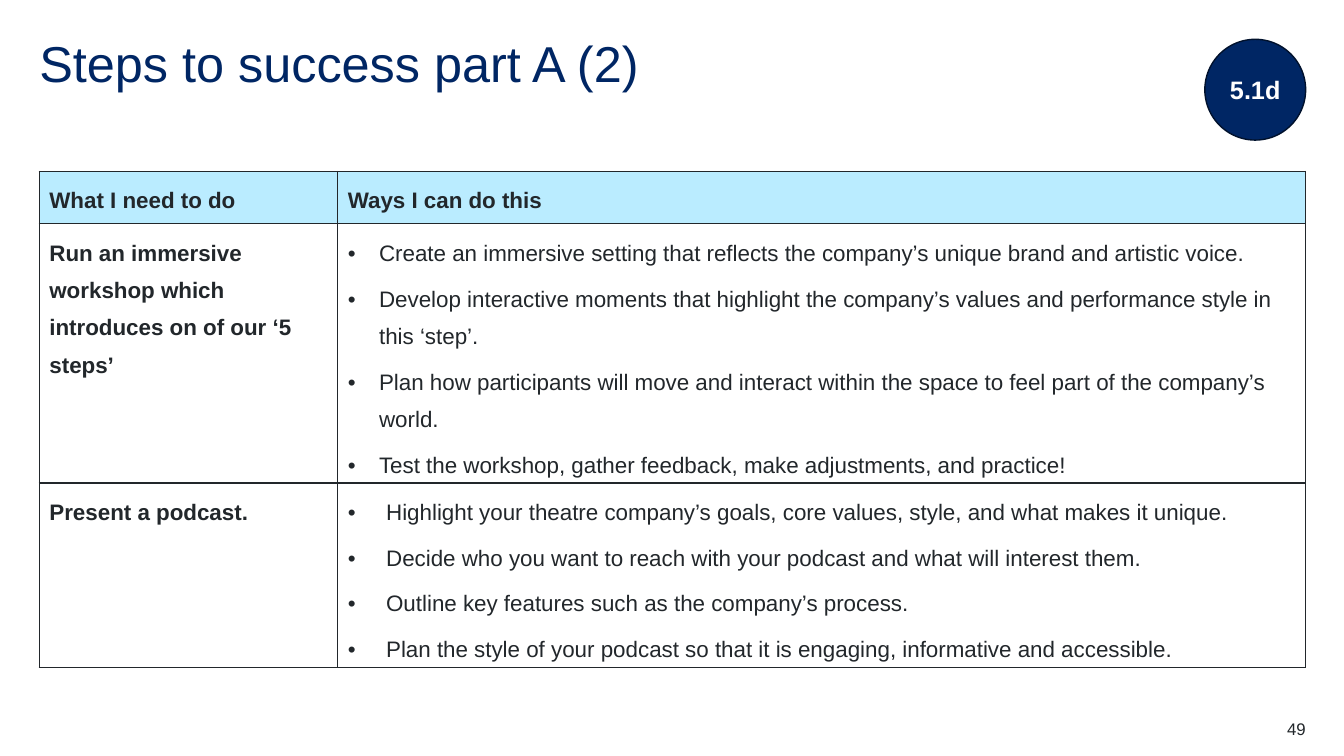
"""Build the 'Steps to success part A (2)' slide."""
from lxml.etree import SubElement
from pptx import Presentation
from pptx.dml.color import RGBColor
from pptx.enum.shapes import MSO_SHAPE
from pptx.enum.text import MSO_ANCHOR, PP_ALIGN
from pptx.oxml.ns import qn
from pptx.util import Inches, Pt

TITLE = "Steps to success part A (2)"
BADGE = "5.1d"
PAGE_NUMBER = "49"
HEADERS = ["What I need to do", "Ways I can do this"]
STEPS = [
    ("Run an immersive workshop which introduces on of our ‘5 steps’", 0.31, [
        "Create an immersive setting that reflects the company’s unique brand and artistic voice.",
        "Develop interactive moments that highlight the company’s values and performance style in this ‘step’.",
        "Plan how participants will move and interact within the space to feel part of the company’s world.",
        "Test the workshop, gather feedback, make adjustments, and practice!",
    ]),
    ("Present a podcast.", 0.38, [
        "Highlight your theatre company’s goals, core values, style, and what makes it unique.",
        "Decide who you want to reach with your podcast and what will interest them.",
        "Outline key features such as the company’s process.",
        "Plan the style of your podcast so that it is engaging, informative and accessible.",
    ]),
]
NAVY, NAVY_EDGE, INK, SKY, WHITE = "002664", "00112C", "22272B", "BAECFF", "FFFFFF"
MARGIN, CONTENT_WIDTH = 0.39, 12.56
RIGHT_EDGE = MARGIN + CONTENT_WIDTH
TABLE_TOP = 1.7
COLUMN_WIDTHS = [2.96, 9.6]
ROW_HEIGHTS = [0.52, 2.57, 1.82]


def color(value):
    return RGBColor.from_string(value)


def format_paragraph(paragraph, size, font_color, bold=False, align=PP_ALIGN.LEFT):
    paragraph.alignment = align
    for run in paragraph.runs:
        run.font.name = "Arial"
        run.font.size = Pt(size)
        run.font.bold = bold
        run.font.color.rgb = color(font_color)


def clear_insets(text_frame):
    text_frame.margin_left = text_frame.margin_right = 0
    text_frame.margin_top = text_frame.margin_bottom = 0
    text_frame.vertical_anchor = MSO_ANCHOR.TOP
    text_frame.word_wrap = True


def add_bullet(paragraph, indent):
    properties = paragraph._p.get_or_add_pPr()
    properties.set("marL", str(Inches(indent)))
    properties.set("indent", str(-Inches(indent)))
    SubElement(properties, qn("a:buFont"), typeface="Arial")
    SubElement(properties, qn("a:buChar"), char="•")


def add_borders(cell):
    properties = cell._tc.get_or_add_tcPr()
    for side in ("lnL", "lnR", "lnT", "lnB"):
        line = SubElement(properties, qn(f"a:{side}"), w=str(Pt(1)))
        SubElement(SubElement(line, qn("a:solidFill")), qn("a:srgbClr"), val=INK)


def fill_cell(cell, lines, bold=True, indent=0, fill=None):
    add_borders(cell)
    if fill:
        cell.fill.solid()
        cell.fill.fore_color.rgb = color(fill)
    else:
        cell.fill.background()
    cell.text_frame.text = "\n".join(lines)
    for paragraph in cell.text_frame.paragraphs:
        format_paragraph(paragraph, 16, INK, bold)
        paragraph.line_spacing = 1.5
        paragraph.space_after = Pt(6)
        if indent:
            add_bullet(paragraph, indent)


def add_title(slide):
    title = slide.shapes.title
    title.left, title.top = Inches(MARGIN), Inches(MARGIN)
    title.width, title.height = Inches(CONTENT_WIDTH), Inches(0.6)
    title.text_frame.text = TITLE
    clear_insets(title.text_frame)
    paragraph = title.text_frame.paragraphs[0]
    paragraph.line_spacing = 0.9
    format_paragraph(paragraph, 36, NAVY)


def add_badge(slide):
    badge = slide.shapes.add_shape(
        MSO_SHAPE.OVAL, Inches(RIGHT_EDGE - 1), Inches(MARGIN), Inches(1), Inches(1))
    badge.shadow.inherit = False
    badge.fill.solid()
    badge.fill.fore_color.rgb = color(NAVY)
    badge.line.color.rgb = color(NAVY_EDGE)
    badge.line.width = Pt(1)
    badge.text_frame.text = BADGE
    badge.text_frame.vertical_anchor = MSO_ANCHOR.MIDDLE
    format_paragraph(badge.text_frame.paragraphs[0], 18, WHITE, True, PP_ALIGN.CENTER)


def add_steps_table(slide):
    table = slide.shapes.add_table(
        len(ROW_HEIGHTS), len(COLUMN_WIDTHS), Inches(MARGIN), Inches(TABLE_TOP),
        Inches(CONTENT_WIDTH), Inches(sum(ROW_HEIGHTS))).table
    table.horz_banding = False
    for column, width in zip(table.columns, COLUMN_WIDTHS):
        column.width = Inches(width)
    for row, height in zip(table.rows, ROW_HEIGHTS):
        row.height = Inches(height)
    for column_index, header in enumerate(HEADERS):
        fill_cell(table.cell(0, column_index), [header], fill=SKY)
    for row_index, (task, indent, ways) in enumerate(STEPS, start=1):
        fill_cell(table.cell(row_index, 0), [task])
        fill_cell(table.cell(row_index, 1), ways, bold=False, indent=indent)


def add_page_number(slide):
    box = slide.shapes.add_textbox(
        Inches(RIGHT_EDGE - 0.79), Inches(7.13), Inches(0.79), Inches(0.2))
    box.text_frame.text = PAGE_NUMBER
    clear_insets(box.text_frame)
    format_paragraph(box.text_frame.paragraphs[0], 12, INK, align=PP_ALIGN.RIGHT)


def main():
    presentation = Presentation()
    presentation.slide_width = Inches(13.33)
    presentation.slide_height = Inches(7.5)
    slide = presentation.slides.add_slide(presentation.slide_layouts[5])
    add_title(slide)
    add_badge(slide)
    add_steps_table(slide)
    add_page_number(slide)
    presentation.save("out.pptx")


if __name__ == "__main__":
    main()
